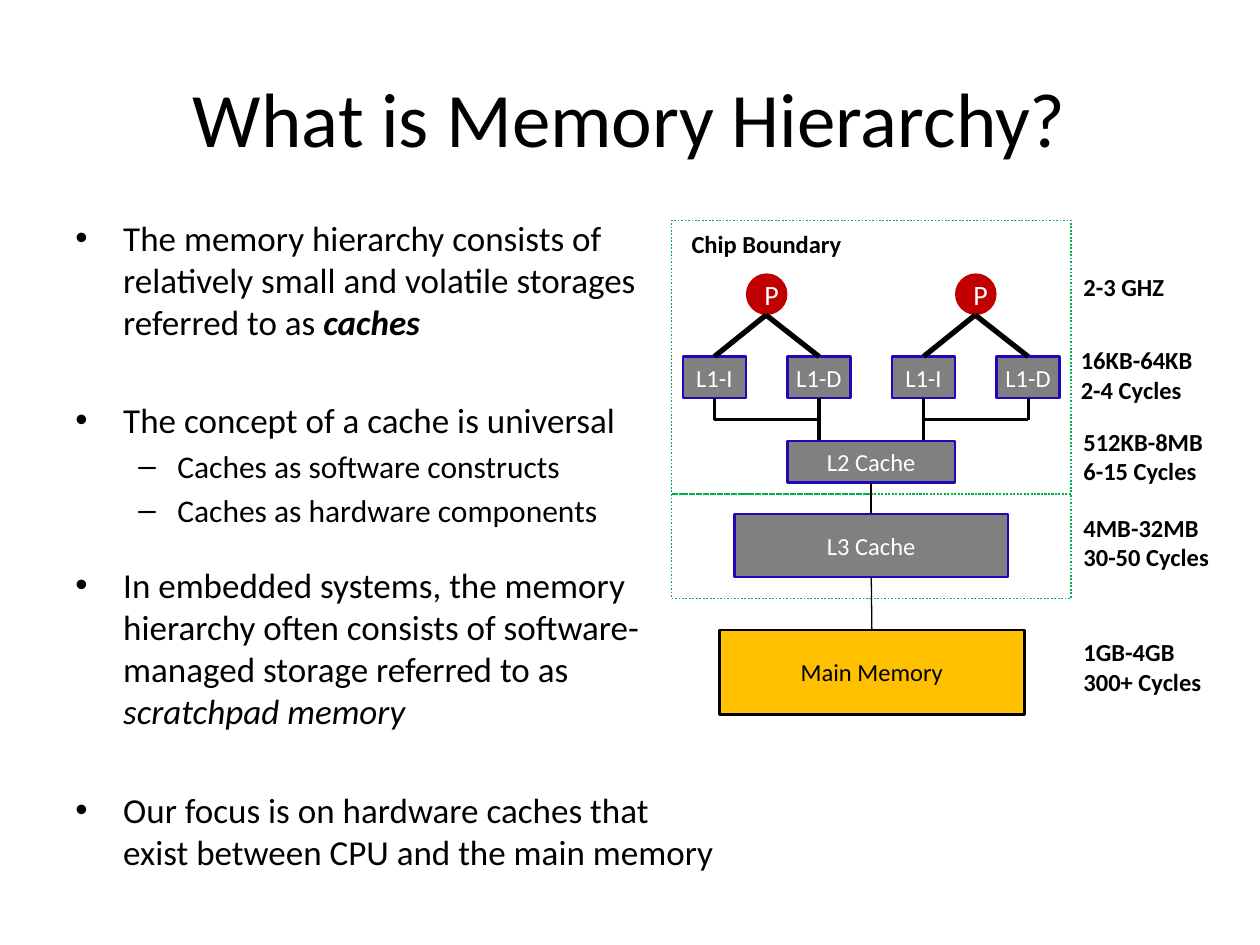
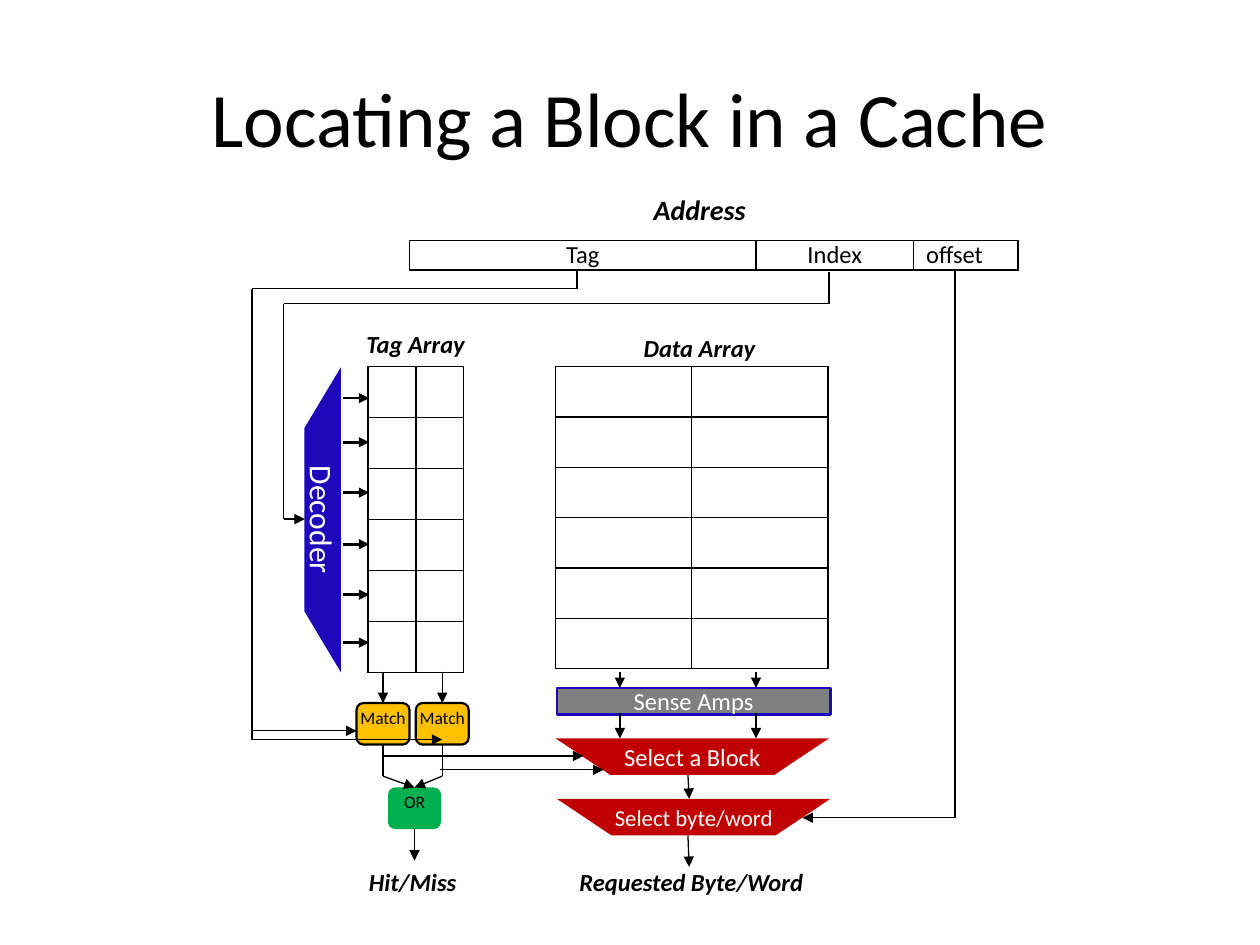
from dataclasses import dataclass
from typing import NamedTuple, Optional, Union

import lxml.etree
import pptx
import pptx.dml.color
import pptx.enum.dml
import pptx.enum.shapes
import pptx.enum.text
import pptx.oxml.ns
import pptx.shapes.autoshape
import pptx.slide
import pptx.util

FONT = "Calibri"
COLORS = {
    "black": "000000",
    "white": "FFFFFF",
    "gray": "808080",
    "blue": "1D08BA",
    "red": "C00000",
    "gold": "FFC000",
    "green": "00B050",
}
TOP, BOTTOM = 0, 2
Inches = pptx.util.Inches
Shape = pptx.shapes.autoshape.Shape
Slide = pptx.slide.Slide
KIND = pptx.enum.shapes.MSO_SHAPE
ALIGN = pptx.enum.text.PP_ALIGN
ANCHOR = pptx.enum.text.MSO_ANCHOR
qn = pptx.oxml.ns.qn


class Rect(NamedTuple):
    left: float
    top: float
    width: float
    height: float


class Inset(NamedTuple):
    left: float = 0.1
    top: float = 0.05
    right: float = 0.1
    bottom: float = 0.05


class Point(NamedTuple):
    x: float
    y: float


class Join(NamedTuple):
    shape: Shape
    side: int


class Run(NamedTuple):
    text: str
    bold: bool = False
    slant: bool = False


class Para(NamedTuple):
    runs: list[Run]
    before: float
    level: int = 0
    split: bool = False


@dataclass
class Look:
    kind: int
    fill: Optional[str] = None
    edge: Optional[str] = None
    weight: float = 1.5
    size: float = 14
    ink: str = "white"
    inset: Inset = Inset()
    dash: bool = False
    turn: float = 0


End = Union[Point, Join]
FLAT = Inset(0, 0.05, 0, 0.05)
LOW = Inset(0, 0, 0, 0.1)
CHIP = Look(KIND.RECTANGLE, "gray", "blue", inset=FLAT)
CORE = Look(KIND.RECTANGLE, "gray", "blue")
CPU = Look(KIND.OVAL, "red", size=16)
MEMORY = Look(KIND.RECTANGLE, "gold", "black", ink="black", inset=FLAT)
BOUND = Look(KIND.RECTANGLE, edge="green", weight=1, dash=True)
MATCH = Look(KIND.ROUNDED_RECTANGLE, "gold", "black", 1.25, 10, "black", LOW)
GATE = Look(KIND.ROUNDED_RECTANGLE, "green", size=10, ink="black", inset=LOW)
DECODE = Look(KIND.FLOWCHART_MANUAL_OPERATION, "blue", size=18, turn=90)
BLOCK = Look(KIND.FLOWCHART_MANUAL_OPERATION, "red")
BYTE = Look(KIND.FLOWCHART_MANUAL_OPERATION, "red", size=13, inset=Inset(0, 0, 0, 0))


def rgb(name: str) -> pptx.dml.color.RGBColor:
    return pptx.dml.color.RGBColor.from_string(COLORS[name])


def place(rect: Rect) -> list[int]:
    return [Inches(part) for part in rect]


def pad(frame, inset: Inset) -> None:
    for side, value in inset._asdict().items():
        setattr(frame, f"margin_{side}", Inches(value))


def write(para, run: Run, size: float, ink: str = "black") -> None:
    item = para.add_run()
    item.text = run.text
    font = item.font
    font.name, font.size = FONT, pptx.util.Pt(size)
    font.bold, font.italic = run.bold, run.slant
    font.color.rgb = rgb(ink)


def box(slide: Slide, rect: Rect, look: Look, text: str = "") -> Shape:
    shape = slide.shapes.add_shape(look.kind, *place(rect))
    shape.shadow.inherit = False
    shape.rotation = look.turn
    if look.fill:
        shape.fill.solid()
        shape.fill.fore_color.rgb = rgb(look.fill)
    else:
        shape.fill.background()
    if look.edge:
        shape.line.color.rgb = rgb(look.edge)
        shape.line.width = pptx.util.Pt(look.weight)
        if look.dash:
            shape.line.dash_style = pptx.enum.dml.MSO_LINE.ROUND_DOT
    else:
        shape.line.fill.background()
    if text:
        frame = shape.text_frame
        frame.word_wrap = True
        frame.vertical_anchor = ANCHOR.MIDDLE
        pad(frame, look.inset)
        frame.paragraphs[0].alignment = ALIGN.CENTER
        write(frame.paragraphs[0], Run(text), look.size, look.ink)
    return shape


def spot(end: End) -> list[int]:
    if isinstance(end, Point):
        return [Inches(end.x), Inches(end.y)]
    shape = end.shape
    drop = shape.height if end.side == BOTTOM else 0
    return [shape.left + shape.width // 2, shape.top + drop]


def line(slide: Slide, start: End, stop: End, weight: float = 0.75, arrow: bool = False) -> None:
    link = slide.shapes.add_connector(
        pptx.enum.shapes.MSO_CONNECTOR.STRAIGHT, *spot(start), *spot(stop)
    )
    link.line.color.rgb = rgb("black")
    link.line.width = pptx.util.Pt(weight)
    if isinstance(start, Join):
        link.begin_connect(*start)
    if isinstance(stop, Join):
        link.end_connect(*stop)
    props = link._element.spPr
    if arrow:
        lxml.etree.SubElement(props.find(qn("a:ln")), qn("a:tailEnd"), type="triangle")
    lxml.etree.SubElement(props, qn("a:effectLst"))


def route(slide: Slide, ends: list[End], weight: float = 0.75, arrow: bool = False) -> None:
    last = len(ends) - 2
    for i, (start, stop) in enumerate(zip(ends, ends[1:])):
        line(slide, start, stop, weight, arrow and i == last)


def label(slide: Slide, rect: Rect, lines: list[str], size: float = 14, slant: bool = False) -> None:
    frame = slide.shapes.add_textbox(*place(rect)).text_frame
    frame.word_wrap = False
    frame.auto_size = pptx.enum.text.MSO_AUTO_SIZE.SHAPE_TO_FIT_TEXT
    for i, text in enumerate(lines):
        para = frame.add_paragraph() if i else frame.paragraphs[0]
        write(para, Run(text, True, slant), size)


def title(slide: Slide, text: str) -> None:
    frame = slide.shapes.add_textbox(*place(Rect(0.5, 0.3, 9, 1.25))).text_frame
    frame.word_wrap = True
    frame.vertical_anchor = ANCHOR.MIDDLE
    frame.paragraphs[0].alignment = ALIGN.CENTER
    write(frame.paragraphs[0], Run(text), 44)


def body(slide: Slide, paras: list[Para]) -> None:
    styles = [(20, 0.38, -0.38, "•"), (18, 0.81, -0.31, "–")]
    frame = slide.shapes.add_textbox(*place(Rect(0.5, 1.67, 5.33, 5.58))).text_frame
    frame.word_wrap = True
    for i, item in enumerate(paras):
        size, left, first, mark = styles[item.level]
        para = frame.add_paragraph() if i else frame.paragraphs[0]
        para.space_before = pptx.util.Pt(item.before)
        for j, run in enumerate(item.runs):
            if j and item.split:
                para.add_line_break()
            write(para, run, size)
        props = para._p.get_or_add_pPr()
        props.set("marL", str(Inches(left)))
        props.set("indent", str(Inches(first)))
        lxml.etree.SubElement(props, qn("a:buFont"), typeface="Arial")
        lxml.etree.SubElement(props, qn("a:buChar"), char=mark)


def border(cell) -> None:
    props = cell._tc.get_or_add_tcPr()
    for i, side in enumerate("LRTB"):
        edge = lxml.etree.Element(qn(f"a:ln{side}"), w=str(pptx.util.Pt(1)))
        fill = lxml.etree.SubElement(edge, qn("a:solidFill"))
        lxml.etree.SubElement(fill, qn("a:srgbClr"), val=COLORS["black"])
        props.insert(i, edge)


def grid(slide: Slide, rect: Rect, widths: list[float], rows: int, texts: tuple[str, ...] = ()) -> None:
    table = slide.shapes.add_table(rows, len(widths), *place(rect)).table
    table.first_row = table.horz_banding = False
    for col, width in zip(table.columns, widths):
        col.width = Inches(width)
    for row in table.rows:
        row.height = Inches(rect.height / rows)
    for cell in table.iter_cells():
        cell.fill.background()
        pad(cell, Inset(0.1, 0, 0.1, 0))
        border(cell)
    for i, text in enumerate(texts):
        para = table.cell(0, i).text_frame.paragraphs[0]
        para.alignment = ALIGN.LEFT if text == "offset" else ALIGN.CENTER
        write(para, Run(text), 14)


def levels(slide: Slide) -> None:
    title(slide, "What is Memory Hierarchy?")
    body(slide, [
        Para([
            Run("The memory hierarchy consists of relatively small and volatile storages referred to as "),
            Run("caches", True, True),
        ], 0),
        Para([Run("The concept of a cache is universal")], 32),
        Para([Run("Caches as software constructs")], 3.6, 1),
        Para([Run("Caches as hardware components")], 3.6, 1),
        Para([
            Run("In embedded systems, the memory hierarchy often consists of software-managed storage referred to as "),
            Run("scratchpad memory", slant=True),
        ], 20, split=True),
        Para([Run("Our focus is on hardware caches that exist between CPU and the main memory")], 32),
    ])
    for left, flip in ((5.42, False), (7.08, True)):
        box(slide, Rect(left + 0.5, 2.17, 0.33, 0.33), CPU, "P")
        code = box(slide, Rect(left, 2.83, 0.5, 0.33), CORE, "L1-I")
        data = box(slide, Rect(left + 0.83, 2.83, 0.5, 0.33), CHIP, "L1-D")
        for cache in (code, data):
            line(slide, Point(left + 0.66, 2.5), Join(cache, TOP), 3)
        far, near = (data, code) if flip else (code, data)
        far_x, near_x = (left + (1.08 if flip else 0.25), left + (0.25 if flip else 1.08))
        route(slide, [Join(far, BOTTOM), Point(far_x, 3.33), Point(near_x, 3.33)], 1.75)
        line(slide, Join(near, BOTTOM), Point(near_x, 3.5), 1.75)
    second = box(slide, Rect(6.25, 3.5, 1.33, 0.33), CHIP, "L2 Cache")
    third = box(slide, Rect(5.83, 4.08, 2.17, 0.5), CHIP, "L3 Cache")
    main = box(slide, Rect(5.71, 5, 2.42, 0.67), MEMORY, "Main Memory")
    for top, height in ((1.75, 2.17), (3.92, 0.83)):
        box(slide, Rect(5.33, top, 3.17, height), BOUND)
    line(slide, Join(second, BOTTOM), Join(third, TOP), 1.25)
    line(slide, Join(third, BOTTOM), Join(main, TOP))
    label(slide, Rect(5.39, 1.77, 1.4, 0.34), ["Chip Boundary"])
    label(slide, Rect(8.5, 2.11, 0.85, 0.34), ["2-3 GHZ"])
    for left, top, width, size, time in (
        (8.48, 2.69, 1.1, "16KB-64KB", "2-4 Cycles"),
        (8.5, 3.34, 1.16, "512KB-8MB", "6-15 Cycles"),
        (8.5, 4.02, 1.21, "4MB-32MB", "30-50 Cycles"),
        (8.5, 5.01, 1.15, "1GB-4GB", "300+ Cycles"),
    ):
        label(slide, Rect(left, top, width, 0.57), [size, time])


def lookup(slide: Slide) -> None:
    title(slide, "Locating a Block in a Cache")
    grid(slide, Rect(2.92, 2.91, 0.75, 2.43), [0.38, 0.38], 6)
    grid(slide, Rect(4.41, 2.91, 2.17, 2.4), [1.08, 1.08], 6)
    grid(slide, Rect(3.25, 1.91, 4.83, 0.23), [2.75, 1.25, 0.83], 1, ("Tag", "Index", "offset"))
    box(slide, Rect(1.35, 3.98, 2.42, 0.29), DECODE, "Decoder")
    for y in (3.16, 3.51, 3.91, 4.32, 4.72, 5.1):
        line(slide, Point(2.72, y), Point(2.93, y), 1.5, True)
    gate = box(slide, Rect(3.08, 6.25, 0.42, 0.33), GATE, "OR")
    for x in (3.04, 3.51):
        match = box(slide, Rect(x - 0.21, 5.58, 0.42, 0.33), MATCH, "Match")
        line(slide, Point(x, 5.33), Join(match, TOP), arrow=True)
        route(slide, [Join(match, BOTTOM), Point(x, 6.16), Join(gate, TOP)], arrow=True)
    line(slide, Join(gate, BOTTOM), Point(3.29, 6.83), arrow=True)
    box(slide, Rect(4.42, 5.46, 2.17, 0.21), CORE, "Sense Amps")
    box(slide, Rect(4.41, 5.86, 2.17, 0.29), BLOCK, "Select a Block")
    box(slide, Rect(4.42, 6.34, 2.17, 0.29), BYTE, "Select byte/word")
    for x in (4.92, 6):
        for top, low in ((5.33, 5.46), (5.66, 5.86)):
            line(slide, Point(x, top), Point(x, low), arrow=True)
    for path_ends in (
        [(6.58, 2.16), (6.58, 2.41), (2.25, 2.41), (2.25, 4.12), (2.42, 4.12)],
        [(4.58, 2.15), (4.58, 2.29), (2, 2.29), (2, 5.87), (3.51, 5.87)],
        [(2, 5.8), (2.83, 5.8)],
        [(3.04, 6), (4.63, 6)],
        [(3.49, 6.11), (4.79, 6.11)],
        [(5.46, 6.15), (5.47, 6.34)],
        [(5.46, 6.63), (5.47, 6.88)],
        [(7.58, 2.15), (7.58, 6.49), (6.37, 6.49)],
    ):
        route(slide, [Point(*end) for end in path_ends], arrow=True)
    for left, top, width, text in (
        (2.83, 6.83, 0.9, "Hit/Miss"),
        (4.5, 6.83, 1.99, "Requested Byte/Word"),
        (2.81, 2.56, 0.99, "Tag Array"),
        (5.01, 2.59, 1.1, "Data Array"),
    ):
        label(slide, Rect(left, top, width, 0.34), [text], slant=True)
    label(slide, Rect(5.09, 1.48, 0.94, 0.37), ["Address"], 16, True)


def main() -> None:
    deck = pptx.Presentation()
    deck.slide_width, deck.slide_height = Inches(10), Inches(7.5)
    for draw in (levels, lookup):
        draw(deck.slides.add_slide(deck.slide_layouts[6]))
    deck.save("out.pptx")


if __name__ == "__main__":
    main()
